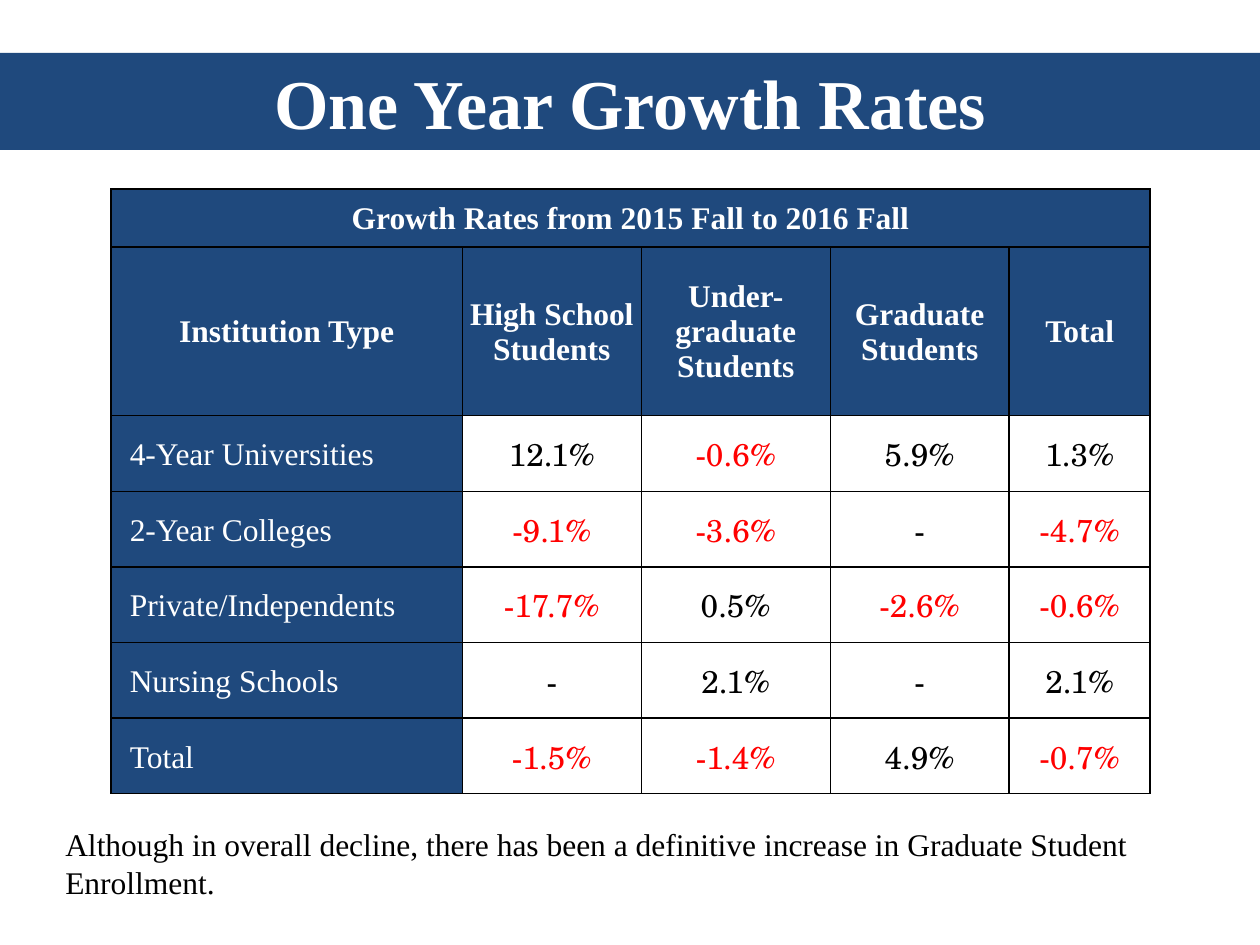
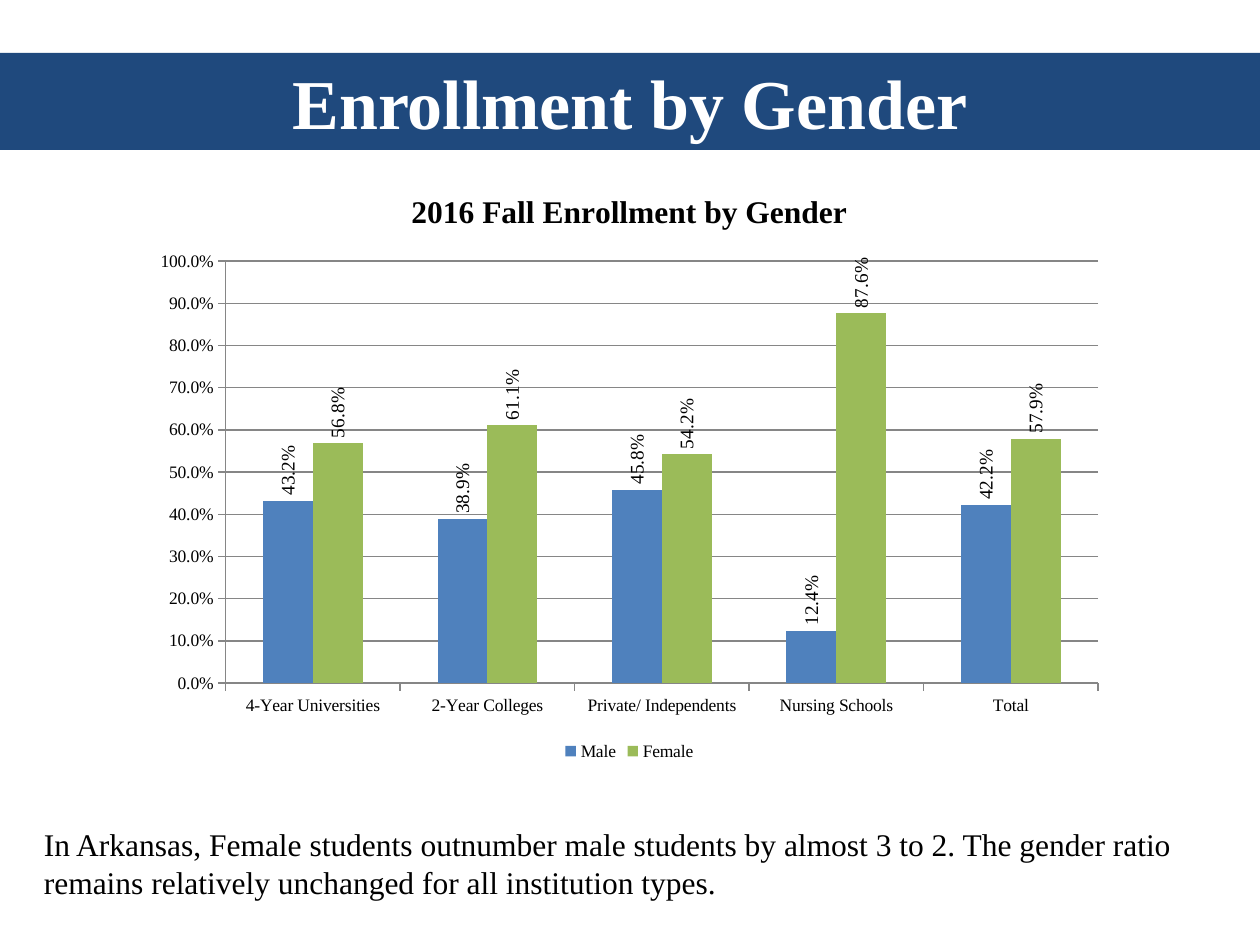
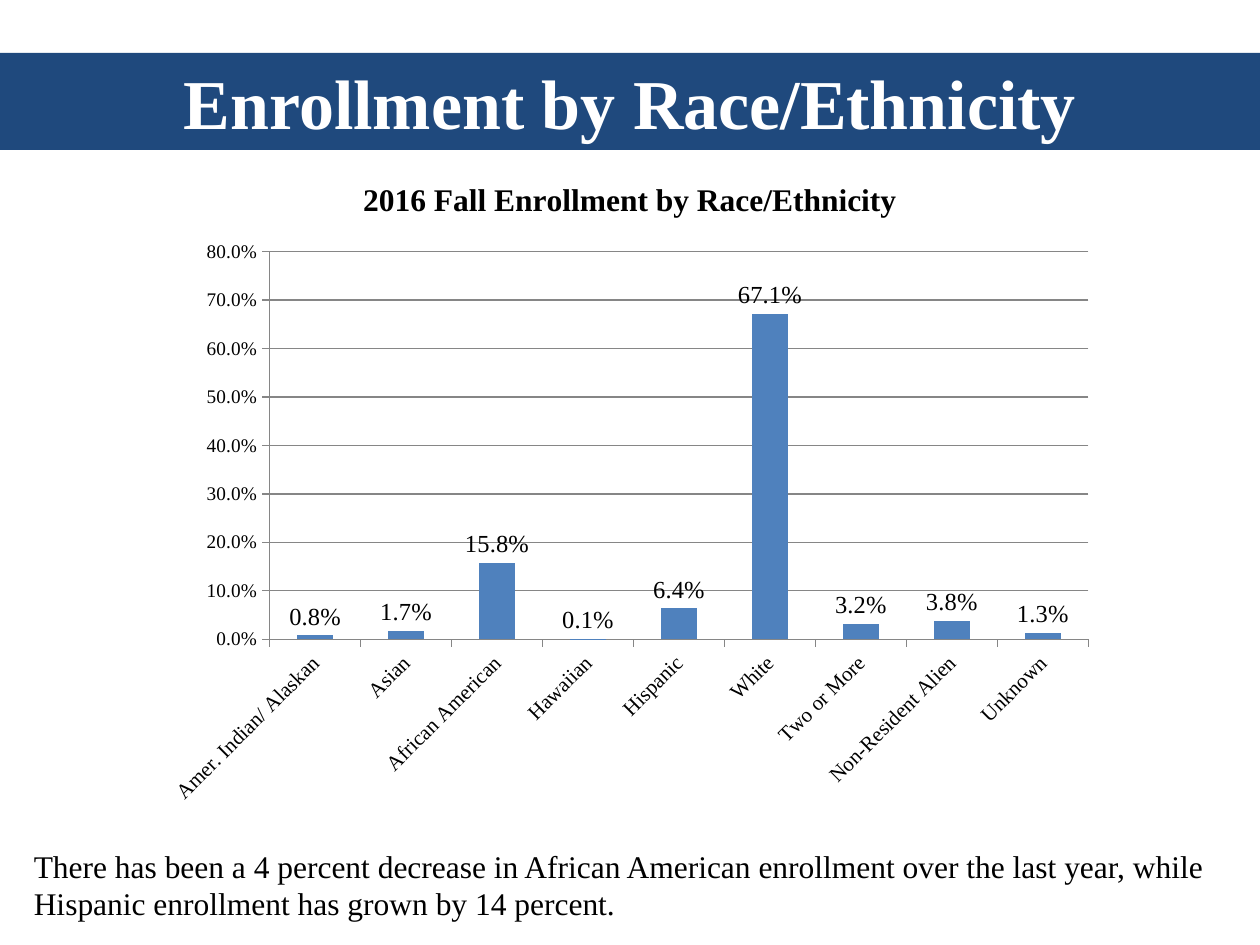
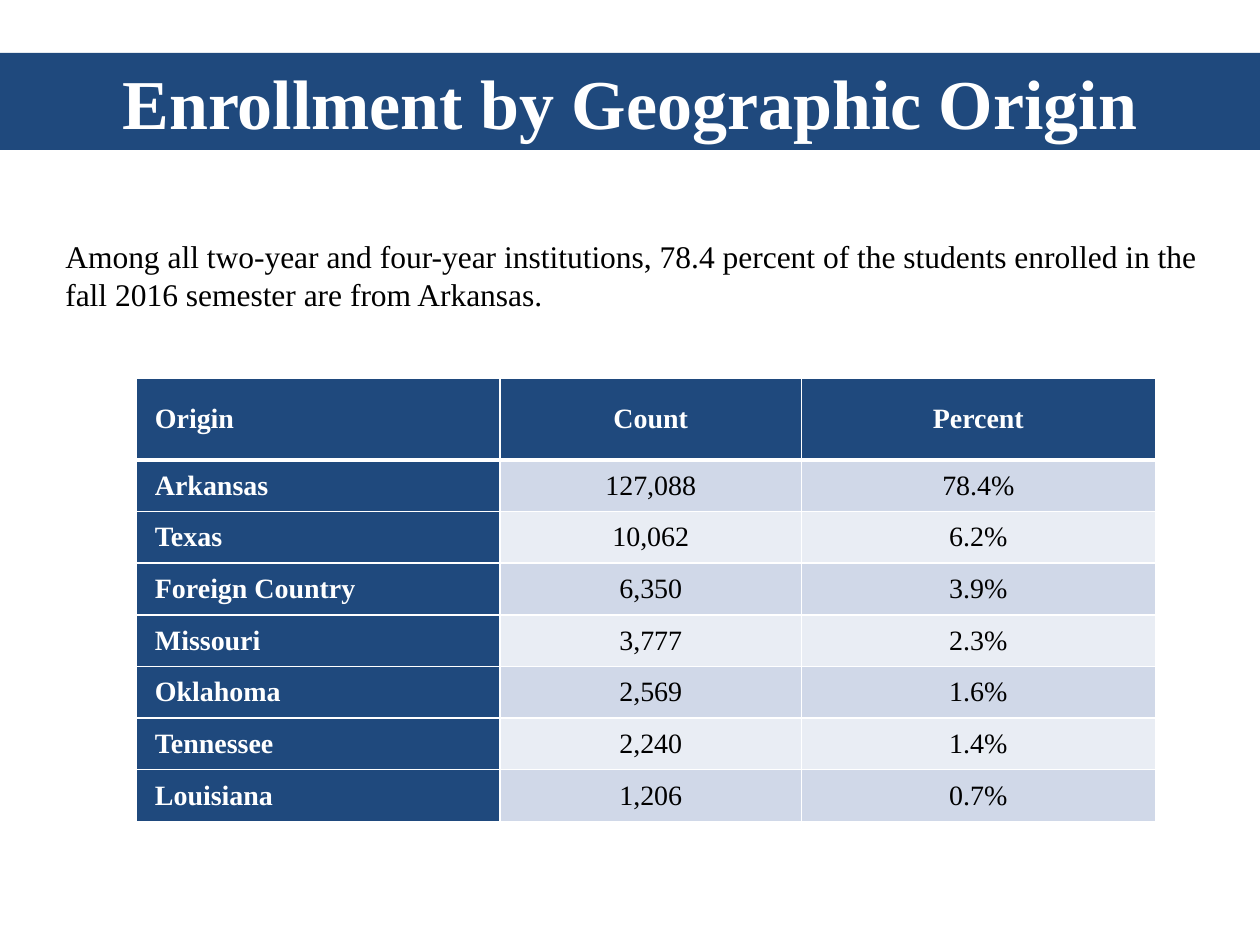
"""Build four slides on fall 2016 student enrollment."""
import lxml.etree
import pptx
import pptx.chart.data
import pptx.dml.color
import pptx.enum.chart
import pptx.enum.shapes
import pptx.enum.text
import pptx.oxml.ns
import pptx.util

Inches = pptx.util.Inches
Pt = pptx.util.Pt
ALIGN = pptx.enum.text.PP_ALIGN
ANCHOR = pptx.enum.text.MSO_ANCHOR

COLORS = {
    "navy": "1F497D", "white": "FFFFFF", "black": "000000", "red": "FF0000",
    "blue": "4F81BD", "green": "9BBB59", "gray": "868686",
    "band_dark": "D0D8E8", "band_light": "E9EDF4",
}
SERIF = "Times New Roman"
FIGURES = "TeX Gyre Schola"
PERCENT = "0.0%"

GROWTH_HEADINGS = ["Institution Type", "High School Students", "Under- graduate Students",
                   "Graduate Students", "Total"]
GROWTH_ROWS = [
    ["4-Year Universities", "12.1%", "-0.6%", "5.9%", "1.3%"],
    ["2-Year Colleges", "-9.1%", "-3.6%", "-", "-4.7%"],
    ["Private/Independents", "-17.7%", "0.5%", "-2.6%", "-0.6%"],
    ["Nursing Schools", "-", "2.1%", "-", "2.1%"],
    ["Total", "-1.5%", "-1.4%", "4.9%", "-0.7%"],
]
ORIGIN_ROWS = [
    ["Origin", "Count", "Percent"],
    ["Arkansas", "127,088", "78.4%"],
    ["Texas", "10,062", "6.2%"],
    ["Foreign Country", "6,350", "3.9%"],
    ["Missouri", "3,777", "2.3%"],
    ["Oklahoma", "2,569", "1.6%"],
    ["Tennessee", "2,240", "1.4%"],
    ["Louisiana", "1,206", "0.7%"],
]
GENDER_SHARES = {
    "4-Year Universities": (0.432, 0.568),
    "2-Year Colleges": (0.389, 0.611),
    "Private/ Independents": (0.458, 0.542),
    "Nursing Schools": (0.124, 0.876),
    "Total": (0.422, 0.579),
}
RACE_SHARES = {
    "Amer. Indian/ Alaskan": (0.008,), "Asian": (0.017,), "African American": (0.158,),
    "Hawaiian": (0.001,), "Hispanic": (0.064,), "White": (0.671,), "Two or More": (0.032,),
    "Non-Resident Alien": (0.038,), "Unknown": (0.013,),
}


def rgb(name):
    """Return the named colour."""
    return pptx.dml.color.RGBColor.from_string(COLORS[name])


def style_font(font, size, color="black", bold=False, name=SERIF):
    """Set the face, size, weight and colour of a font."""
    font.name, font.size, font.bold = name, Pt(size), bold
    font.color.rgb = rgb(color)


def write(frame, text, size, color="black", bold=False, name=SERIF, align=ALIGN.LEFT):
    """Write one paragraph into a text frame."""
    para = frame.paragraphs[0]
    para.alignment = align
    span = para.add_run()
    span.text = text
    style_font(span.font, size, color, bold, name)


def add_page(deck, title):
    """Add a page with the title band across it."""
    page = deck.slides.add_slide(deck.slide_layouts[6])
    band = page.shapes.add_shape(pptx.enum.shapes.MSO_SHAPE.RECTANGLE,
                                 0, Inches(0.42), deck.slide_width, Inches(0.77))
    band.shadow.inherit = False
    band.fill.solid()
    band.fill.fore_color.rgb = rgb("navy")
    band.line.fill.background()
    band.text_frame.word_wrap = True
    band.text_frame.vertical_anchor = ANCHOR.MIDDLE
    write(band.text_frame, title, 40, "white", True, align=ALIGN.CENTER)
    return page


def add_remark(page, box, text):
    """Add the sentence that comments on the figures."""
    remark = page.shapes.add_textbox(*map(Inches, box))
    remark.text_frame.word_wrap = True
    write(remark.text_frame, text, 18)


def set_borders(cell, color, bottom=1):
    """Draw a one-point border round a cell, with its own bottom width."""
    properties = cell._tc.get_or_add_tcPr()
    for side, width in (("L", 1), ("R", 1), ("T", 1), ("B", bottom)):
        line = lxml.etree.SubElement(properties, pptx.oxml.ns.qn(f"a:ln{side}"), w=str(Pt(width)))
        fill = lxml.etree.SubElement(line, pptx.oxml.ns.qn("a:solidFill"))
        lxml.etree.SubElement(fill, pptx.oxml.ns.qn("a:srgbClr"), val=COLORS[color])


def fill_cell(cell, fill, margins, anchor=ANCHOR.MIDDLE):
    """Set the fill, margins (left, top, right, bottom) and anchor of a cell."""
    cell.fill.solid()
    cell.fill.fore_color.rgb = rgb(fill)
    (cell.margin_left, cell.margin_top,
     cell.margin_right, cell.margin_bottom) = map(Inches, margins)
    cell.vertical_anchor = anchor


def add_grid(page, left, top, widths, heights):
    """Add an unstyled table with the given column widths and row heights."""
    grid = page.shapes.add_table(len(heights), len(widths), Inches(left), Inches(top),
                                 Inches(sum(widths)), Inches(sum(heights))).table
    grid.first_row = grid.horz_banding = False
    for column, width in zip(grid.columns, widths):
        column.width = Inches(width)
    for row, height in zip(grid.rows, heights):
        row.height = Inches(height)
    return grid


def add_growth_table(page, left, top):
    """Add the growth rates, with declines in red."""
    grid = add_grid(page, left, top, [2.79, 1.42, 1.5, 1.42, 1.12], [0.46, 1.34] + [0.6] * 5)
    tight = (0.01, 0.01, 0.01, 0)
    caption = ["Growth Rates from 2015 Fall to 2016 Fall"] + [""] * 4
    for r, texts in enumerate([caption, GROWTH_HEADINGS] + GROWTH_ROWS):
        for c, text in enumerate(texts):
            cell = grid.cell(r, c)
            set_borders(cell, "black")
            if r < 2:
                fill_cell(cell, "navy", tight)
                if text:
                    write(cell.text_frame, text, 18, "white", True, align=ALIGN.CENTER)
            elif c == 0:
                fill_cell(cell, "navy", (0.15,) * 4, ANCHOR.BOTTOM)
                write(cell.text_frame, text, 18, "white")
            else:
                fill_cell(cell, "white", tight)
                color = "red" if text.startswith("-") and text != "-" else "black"
                write(cell.text_frame, text, 18, color, name=FIGURES, align=ALIGN.CENTER)
    grid.cell(0, 0).merge(grid.cell(0, 4))


def add_origin_table(page, left, top):
    """Add the banded table of student origins."""
    grid = add_grid(page, left, top, [2.89, 2.39, 2.81], [0.65] + [0.41] * 7)
    for r, texts in enumerate(ORIGIN_ROWS):
        for c, text in enumerate(texts):
            cell = grid.cell(r, c)
            heading = r == 0 or c == 0
            margin = 0.07 if c else 0.15
            band = "band_dark" if r % 2 else "band_light"
            set_borders(cell, "white", 1 if r else 3)
            fill_cell(cell, "navy" if heading else band, (margin, 0, margin, 0))
            write(cell.text_frame, text, 16, "white" if heading else "black", heading,
                  align=ALIGN.CENTER if c else ALIGN.LEFT)


def rotate_text(element, degrees):
    """Turn the text of a chart part."""
    body = element.find(pptx.oxml.ns.qn("c:txPr")).find(pptx.oxml.ns.qn("a:bodyPr"))
    body.set("rot", str(degrees * 60000))
    body.set("vert", "horz")


def style_axis(axis, size):
    """Set the line, ticks and labels of an axis."""
    axis.format.line.color.rgb = rgb("gray")
    axis.major_tick_mark = pptx.enum.chart.XL_TICK_MARK.OUTSIDE
    axis.minor_tick_mark = pptx.enum.chart.XL_TICK_MARK.NONE
    style_font(axis.tick_labels.font, size)


def add_share_chart(page, box, title, shares, series_names, maximum,
                    category_size=10, value_size=10, label_size=11,
                    category_turn=0, label_turn=0):
    """Add a column chart of enrollment shares."""
    data = pptx.chart.data.CategoryChartData(number_format=PERCENT)
    data.categories = list(shares)
    for name, values in zip(series_names, zip(*shares.values())):
        data.add_series(name, values)
    chart = page.shapes.add_chart(pptx.enum.chart.XL_CHART_TYPE.COLUMN_CLUSTERED,
                                  *map(Inches, box), data).chart
    style_font(chart.font, 10)
    chart.has_title = True
    write(chart.chart_title.text_frame, title, 18, bold=True, align=ALIGN.CENTER)
    chart.chart_title.include_in_layout = False

    chart.has_legend = len(series_names) > 1
    if chart.has_legend:
        chart.legend.position = pptx.enum.chart.XL_LEGEND_POSITION.BOTTOM
        chart.legend.include_in_layout = False
        style_font(chart.legend.font, 10)

    style_axis(chart.category_axis, category_size)
    rotate_text(chart.category_axis._element, category_turn)
    axis = chart.value_axis
    style_axis(axis, value_size)
    axis.minimum_scale, axis.maximum_scale, axis.major_unit = 0, maximum, 0.1
    axis.tick_labels.number_format = PERCENT
    axis.tick_labels.number_format_is_linked = False
    axis.has_major_gridlines = True
    axis.major_gridlines.format.line.color.rgb = rgb("gray")

    plot = chart.plots[0]
    plot.gap_width, plot.overlap, plot.vary_by_categories = 150, 0, False
    for series, color in zip(plot.series, ("blue", "green")):
        series.format.fill.solid()
        series.format.fill.fore_color.rgb = rgb(color)
        labels = series.data_labels
        labels.show_value = True
        labels.position = pptx.enum.chart.XL_LABEL_POSITION.OUTSIDE_END
        labels.number_format = PERCENT
        labels.number_format_is_linked = False
        style_font(labels.font, label_size)
        rotate_text(labels._element, label_turn)


def main():
    """Build and save the deck."""
    deck = pptx.Presentation()
    deck.slide_width, deck.slide_height = Inches(10), Inches(7.5)

    page = add_page(deck, "One Year Growth Rates")
    add_growth_table(page, 0.88, 1.5)
    add_remark(page, (0.42, 6.5, 9, 0.71),
               "Although in overall decline, there has been a definitive increase in "
               "Graduate Student Enrollment.")

    page = add_page(deck, "Enrollment by Gender")
    add_share_chart(page, (1.12, 1.33, 7.75, 4.75), "2016 Fall Enrollment by Gender",
                    GENDER_SHARES, ["Male", "Female"], 1, label_turn=-90)
    add_remark(page, (0.25, 6.5, 9.42, 0.71),
               "In Arkansas, Female students outnumber male students by almost 3 to 2. "
               "The gender ratio remains relatively unchanged for all institution types.")

    page = add_page(deck, "Enrollment by Race/Ethnicity")
    add_share_chart(page, (1.21, 1.23, 7.58, 5.25), "2016 Fall Enrollment by Race/Ethnicity",
                    RACE_SHARES, ["Series 1"], 0.8, category_size=12, value_size=11,
                    label_size=14, category_turn=-45)
    add_remark(page, (0.17, 6.67, 9.83, 0.71),
               "There has been a 4 percent decrease in African American enrollment over the "
               "last year, while Hispanic enrollment has grown by 14 percent.")

    page = add_page(deck, "Enrollment by Geographic Origin")
    add_origin_table(page, 1.08, 3)
    add_remark(page, (0.42, 1.83, 9.42, 0.71),
               "Among all two-year and four-year institutions, 78.4 percent of the students "
               "enrolled in the fall 2016 semester are from Arkansas.")

    deck.save("out.pptx")


if __name__ == "__main__":
    main()
